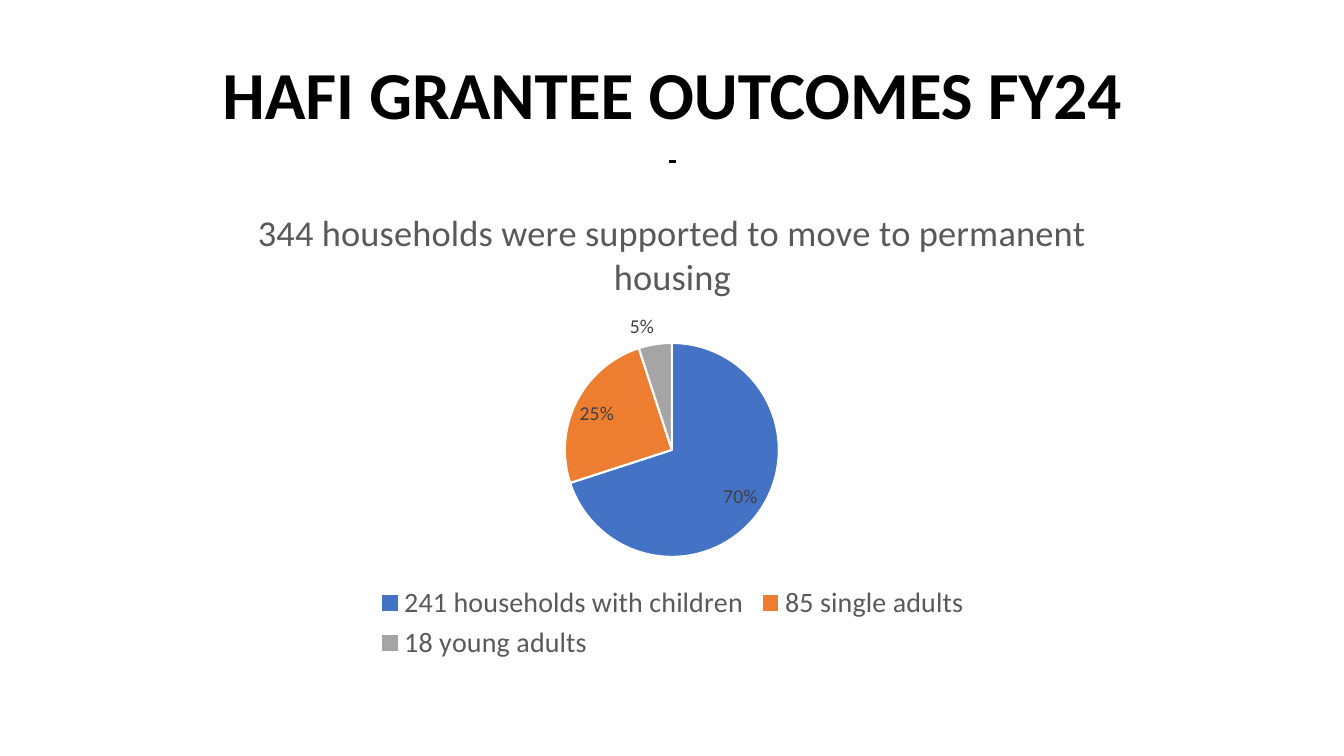
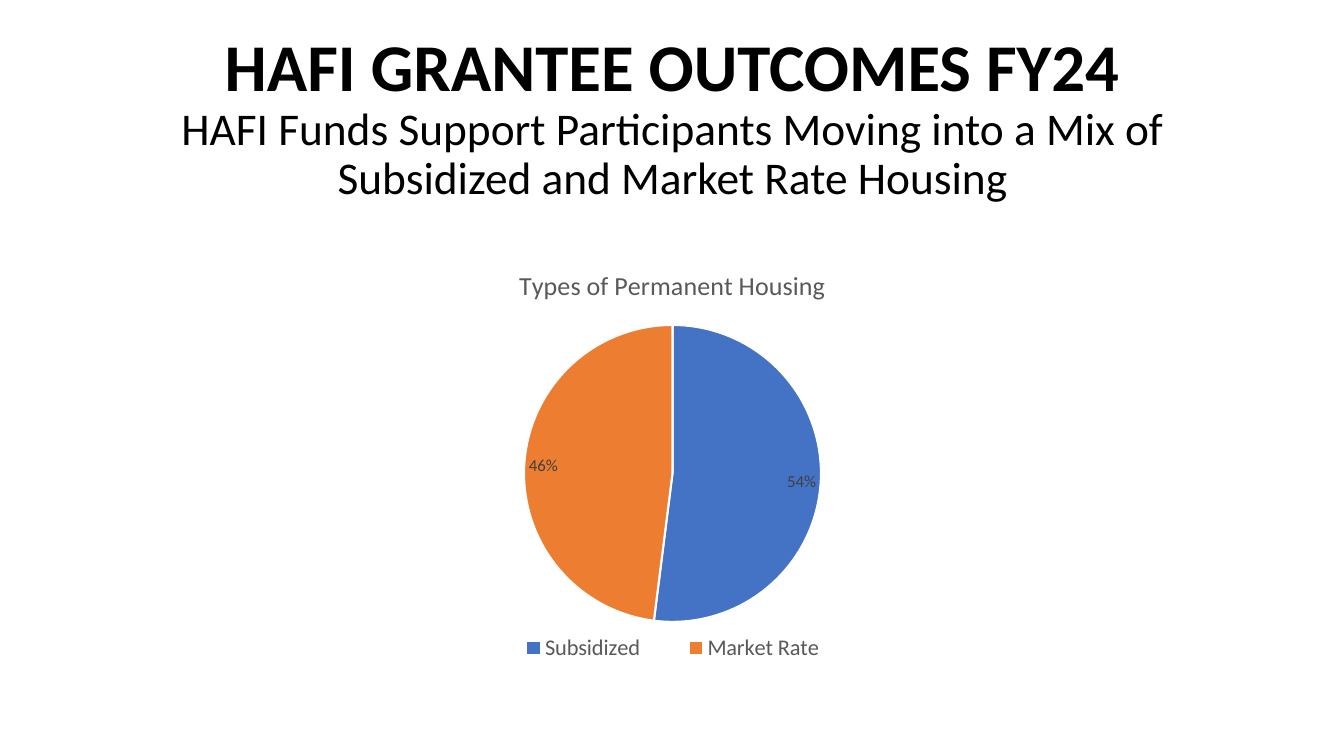
"""Build two slides of grantee outcomes, each with a headline and a pie chart."""
from dataclasses import dataclass

from lxml.etree import SubElement
from pptx import Presentation
from pptx.chart.data import CategoryChartData
from pptx.dml.color import RGBColor
from pptx.enum.chart import XL_CHART_TYPE, XL_LABEL_POSITION, XL_LEGEND_POSITION
from pptx.enum.text import MSO_ANCHOR, PP_ALIGN
from pptx.oxml.ns import qn
from pptx.util import Pt

SLIDE_WIDTH, SLIDE_HEIGHT = 1344, 756
SCALE = 12192000 / SLIDE_WIDTH
BODY_LEFT, BODY_WIDTH = 93, 1159


@dataclass(frozen=True)
class Theme:
    font: str = "Calibri"
    ink: str = "000000"
    grey: str = "595959"
    label: str = "404040"
    white: str = "FFFFFF"
    slices: tuple = ("4472C4", "ED7D31", "A5A5A5")
    edge: float = 1.5
    line_spacing: float = 0.9


THEME = Theme()
HEADLINE = "HAFI GRANTEE OUTCOMES FY24"

SLIDES = [
    {
        "lines": [
            (HEADLINE, {"size": 48, "bold": True}),
            (" ", {"size": 20, "underline": True}),
        ],
        "title_top": 40, "title_height": 146, "title_inset": 5,
        "chart_top": 186, "chart_height": 480,
        "chart_title": "344 households were supported to move to permanent housing",
        "sizes": {"title": 26, "legend": 20, "label": 14},
        "series": [
            ("241 households with children", 0.7, None),
            ("85 single adults", 0.25, None),
            ("18 young adults", 0.05, None),
        ],
        "pie": (565, 343, 214, 214),
        "legend": None,
    },
    {
        "lines": [
            (HEADLINE, {"size": 47.7, "bold": True}),
            ("HAFI Funds Support Participants Moving into a Mix of "
             "Subsidized and Market Rate Housing", {"size": 32.4}),
        ],
        "title_top": 48, "title_height": 201, "title_inset": 64,
        "chart_top": 249, "chart_height": 432,
        "chart_title": "Types of Permanent Housing",
        "sizes": {"title": 18.6, "legend": 16, "label": 12},
        "series": [("Subsidized", 0.52, "54%"), ("Market Rate", 0.48, "46%")],
        "pie": (524, 325, 297, 297),
        "legend": (485, 632, 376, 32),
    },
]


def px(length):
    return round(length * SCALE)


def style_font(font, size, color, bold=False, underline=False):
    font.name = THEME.font
    font.size = Pt(size)
    font.bold = bold
    font.underline = underline
    font.color.rgb = RGBColor.from_string(color)


def write_text(frame, lines, color=THEME.ink, spacing=None):
    paragraph = frame.paragraphs[0]
    paragraph.alignment = PP_ALIGN.CENTER
    if spacing:
        paragraph.line_spacing = spacing
    for index, (text, style) in enumerate(lines):
        if index:
            paragraph.add_line_break()
        run = paragraph.add_run()
        run.text = text
        style_font(run.font, color=color, **style)


def place(parent, index, box, chart_box, inner=False):
    for old in parent.findall(qn("c:layout")):
        parent.remove(old)
    layout = SubElement(parent, qn("c:layout"))
    parent.insert(index, layout)
    manual = SubElement(layout, qn("c:manualLayout"))
    left, top, width, height = chart_box
    fractions = {
        "x": (box[0] - left) / width, "y": (box[1] - top) / height,
        "w": box[2] / width, "h": box[3] / height,
    }
    settings = {"layoutTarget": "inner"} if inner else {}
    settings |= {"xMode": "edge", "yMode": "edge"}
    settings |= {key: f"{value:.4f}" for key, value in fractions.items()}
    for key, value in settings.items():
        SubElement(manual, qn(f"c:{key}")).set("val", value)


def add_headline(slide, content):
    box = slide.shapes.add_textbox(
        px(BODY_LEFT), px(content["title_top"]), px(BODY_WIDTH), px(content["title_height"]))
    frame = box.text_frame
    frame.word_wrap = True
    frame.vertical_anchor = MSO_ANCHOR.MIDDLE
    frame.margin_bottom = px(content["title_inset"])
    write_text(frame, content["lines"], spacing=THEME.line_spacing)


def add_pie(slide, content):
    chart_box = (BODY_LEFT, content["chart_top"], BODY_WIDTH, content["chart_height"])
    sizes = content["sizes"]
    data = CategoryChartData(number_format="0%")
    data.categories = [name for name, _, _ in content["series"]]
    data.add_series("Series 1", [value for _, value, _ in content["series"]])
    chart = slide.shapes.add_chart(XL_CHART_TYPE.PIE, *map(px, chart_box), data).chart
    style_font(chart.font, 10, THEME.ink)

    chart.has_title = True
    write_text(chart.chart_title.text_frame,
               [(content["chart_title"], {"size": sizes["title"]})], THEME.grey)

    chart.has_legend = True
    legend = chart.legend
    legend.position = XL_LEGEND_POSITION.BOTTOM
    legend.include_in_layout = False
    style_font(legend.font, sizes["legend"], THEME.grey)

    plot = chart.plots[0]
    plot.vary_by_categories = True
    labels = plot.series[0].data_labels
    labels.show_value = True
    labels.number_format = "0%"
    labels.number_format_is_linked = False
    labels.position = XL_LABEL_POSITION.BEST_FIT
    style_font(labels.font, sizes["label"], THEME.label)
    for index, (_, _, caption) in enumerate(content["series"]):
        point = plot.series[0].points[index]
        point.format.fill.solid()
        point.format.fill.fore_color.rgb = RGBColor.from_string(THEME.slices[index])
        point.format.line.color.rgb = RGBColor.from_string(THEME.white)
        point.format.line.width = Pt(THEME.edge)
        if caption:
            write_text(point.data_label.text_frame,
                       [(caption, {"size": sizes["label"]})], THEME.label)
            point.data_label.position = XL_LABEL_POSITION.BEST_FIT

    plot_area = chart.element.find(".//" + qn("c:plotArea"))
    place(plot_area, 0, content["pie"], chart_box, inner=True)
    if content["legend"]:
        place(chart.element.find(".//" + qn("c:legend")), 1, content["legend"], chart_box)


def main():
    presentation = Presentation()
    presentation.slide_width = px(SLIDE_WIDTH)
    presentation.slide_height = px(SLIDE_HEIGHT)
    for content in SLIDES:
        slide = presentation.slides.add_slide(presentation.slide_layouts[6])
        add_headline(slide, content)
        add_pie(slide, content)
    presentation.save("out.pptx")


if __name__ == "__main__":
    main()
